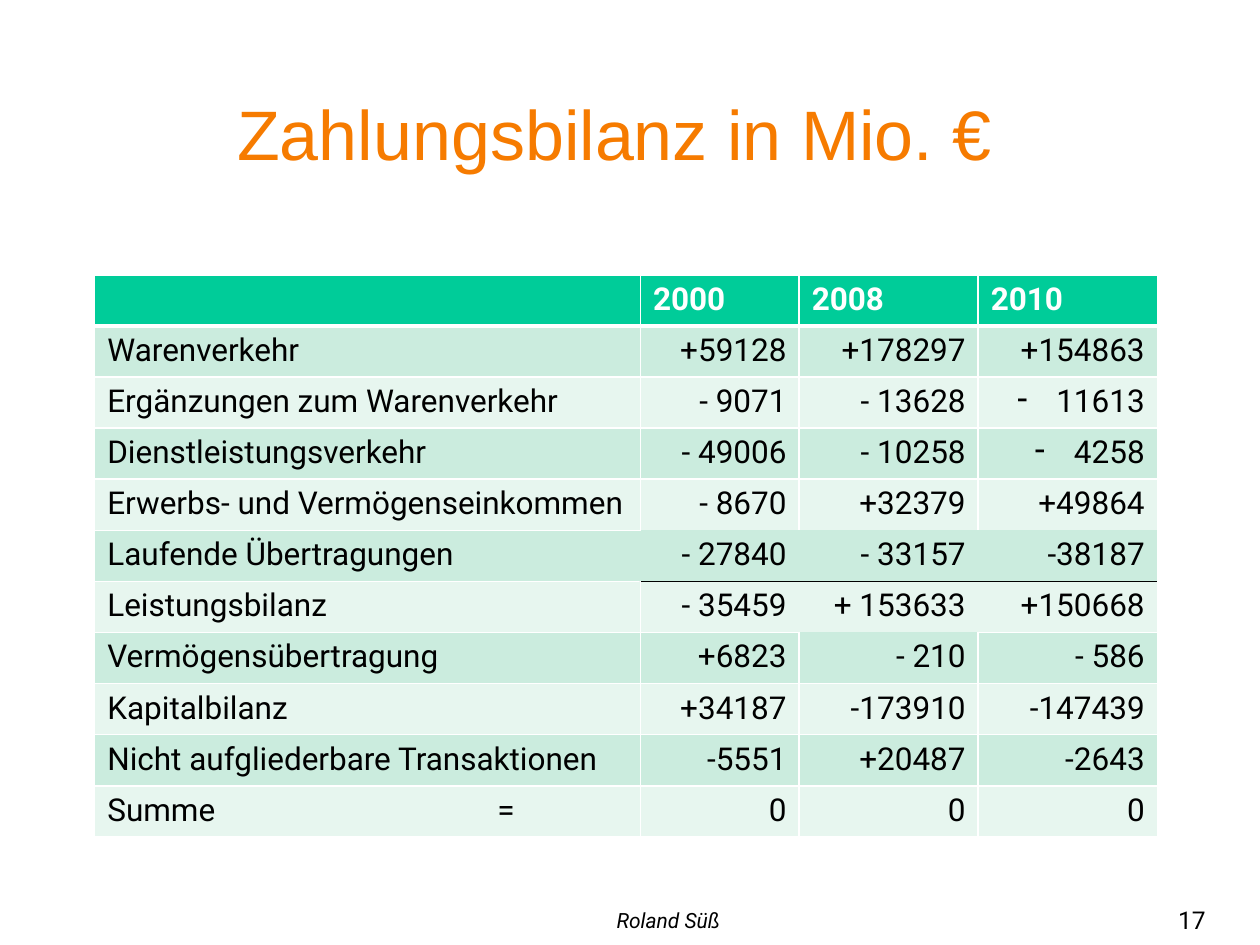
from lxml import etree
from pptx import Presentation
from pptx.dml.color import RGBColor
from pptx.enum.text import MSO_ANCHOR, PP_ALIGN
from pptx.oxml.ns import qn
from pptx.util import Cm, Pt

MID = MSO_ANCHOR.MIDDLE
LEFT, CENTER, RIGHT = PP_ALIGN.LEFT, PP_ALIGN.CENTER, PP_ALIGN.RIGHT
COLORS = {"title": "F67B00", "head": "00CC99", "dark": "CBECDE",
          "light": "E7F6EF", "white": "FFFFFF", "black": "000000"}


def put(par, text, color, align, fmt):
    par.alignment = align
    run = par.add_run()
    run.text = text
    run.font.color.rgb = RGBColor.from_string(COLORS[color])
    for key, val in fmt.items():
        setattr(run.font, key, val)


def edge(props, side, color, width):
    line = etree.SubElement(props, qn("a:ln" + side), w=str(Pt(width)))
    if color is None:
        etree.SubElement(line, qn("a:noFill"))
    else:
        fill = etree.SubElement(line, qn("a:solidFill"))
        etree.SubElement(fill, qn("a:srgbClr"), val=COLORS[color])


deck = Presentation()
deck.slide_width, deck.slide_height = Cm(25.4), Cm(19.05)
slide = deck.slides.add_slide(deck.slide_layouts[6])

texts = [
    ("Zahlungsbilanz in Mio. €", (0.69, 0.84, 23.39, 3.68), 0.25, "title", CENTER,
     {"name": "Arial", "size": Pt(40)}),
    ("Roland Süß", (9.86, 18.03, 5.72, 1.02), 2.57, "black", LEFT,
     {"name": "Roboto", "size": Pt(12), "italic": True}),
    ("17", (23.5, 18.03, 1.9, 1.02), 0.25, "black", LEFT,
     {"name": "Roboto", "size": Pt(14)}),
]
for text, place, inset, color, align, fmt in texts:
    frame = slide.shapes.add_textbox(*map(Cm, place)).text_frame
    frame.word_wrap = True
    frame.vertical_anchor = MID
    frame.margin_left = Cm(inset)
    put(frame.paragraphs[0], text, color, align, fmt)

rows = [
    ("", "2000", "2008", "2010"),
    ("Warenverkehr", "+59128", "+178297", "+154863"),
    ("Ergänzungen zum Warenverkehr", "- 9071", "- 13628", "11613"),
    ("Dienstleistungsverkehr", "- 49006", "- 10258", "4258"),
    ("Erwerbs- und Vermögenseinkommen", "- 8670", "+32379", "+49864"),
    ("Laufende Übertragungen", "- 27840", "- 33157", "-38187"),
    ("Leistungsbilanz", "- 35459", "+ 153633", "+150668"),
    ("Vermögensübertragung", "+6823", "- 210", "- 586"),
    ("Kapitalbilanz", "+34187", "-173910", "-147439"),
    ("Nicht aufgliederbare Transaktionen", "-5551", "+20487", "-2643"),
    ("Summe\t=", "0", "0", "0"),
]
widths = [11, 3.2, 3.61, 3.61]
high = 1.03
dashed = [(2, 3), (3, 3)]
bare = {(4, 1): "B", (4, 2): "B", (4, 3): "B",
        (5, 0): "R", (5, 1): "LRT", (5, 2): "LRT", (5, 3): "LRT",
        (6, 1): "R", (6, 2): "LRB", (6, 3): "L", (7, 2): "T"}
rule = {5: "B", 6: "T"}
thick = {0: "B", 1: "T"}

grid = slide.shapes.add_table(len(rows), len(widths), Cm(1.91), Cm(5.54),
                              Cm(sum(widths)), Cm(high * len(rows))).table
for col, width in zip(grid.columns, widths):
    col.width = Cm(width)

for r, row in enumerate(rows):
    grid.rows[r].height = Cm(high)
    shade = "head" if r == 0 else "dark" if r % 2 else "light"
    for c, text in enumerate(row):
        cell = grid.cell(r, c)
        props = cell._tc.get_or_add_tcPr()
        for side in "LRTB":
            color = "black" if c and side == rule.get(r) else "white"
            if side in bare.get((r, c), ""):
                color = None
            edge(props, side, color, 3 if side == thick.get(r) else 1)
        cell.fill.solid()
        cell.fill.fore_color.rgb = RGBColor.from_string(COLORS[shade])

        par = cell.text_frame.paragraphs[0]
        form = par._p.get_or_add_pPr()
        if (r, c) in dashed:
            form.set("marL", str(Cm(0.79)))
            form.set("indent", str(Cm(-0.79)))
            etree.SubElement(form, qn("a:buChar"), char="-")
        if "\t" in text:
            tabs = etree.SubElement(form, qn("a:tabLst"))
            etree.SubElement(tabs, qn("a:tab"), pos=str(Cm(7.86)), algn="l")
        fmt = {"name": "Roboto", "size": Pt(18), "bold": r == 0}
        if text:
            put(par, text, "black" if r else "white", RIGHT if r and c else LEFT, fmt)

deck.save("out.pptx")
